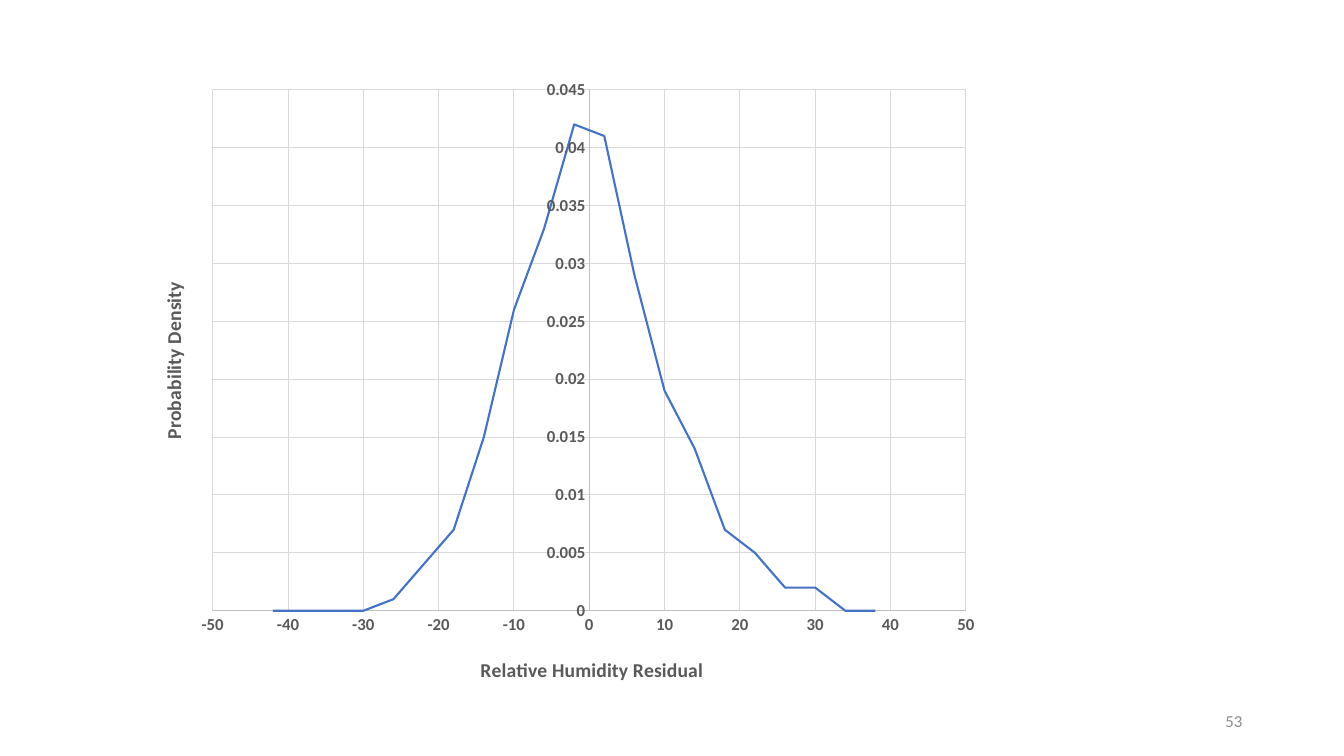
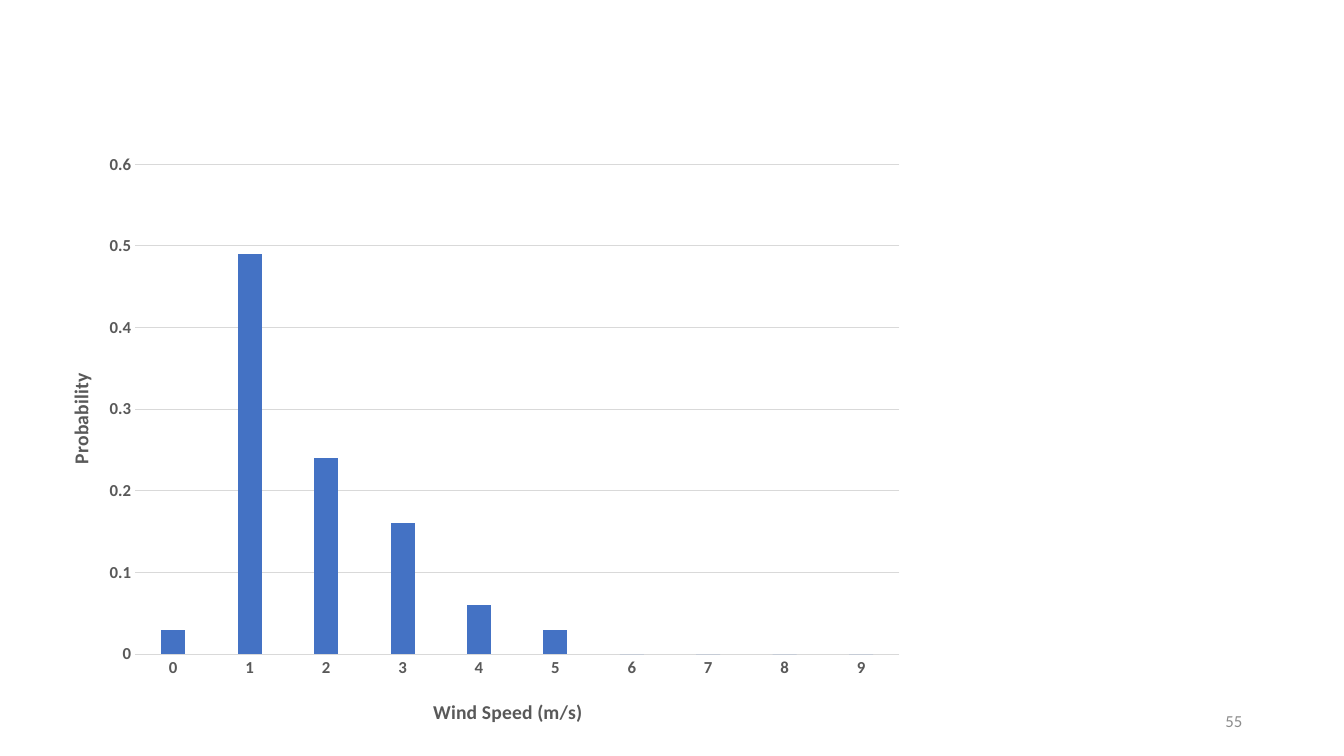
"""Build two chart slides: humidity residual density and wind speed probability."""
from lxml import etree
from pptx import Presentation
from pptx import util as u
from pptx.chart import data as chart_data
from pptx.dml.color import RGBColor
from pptx.enum import chart as chart_enum, text
from pptx.oxml import ns

COLORS = {"series": "4472C4", "label": "595959", "grid": "D9D9D9", "axis": "BFBFBF", "number": "8C8C8C"}
FONT = "Calibri"
CHART_TYPES = chart_enum.XL_CHART_TYPE


def style_font(font, size, color, bold=False):
    for name, value in {"name": FONT, "size": u.Pt(size), "bold": bold}.items():
        setattr(font, name, value)
    font.color.rgb = RGBColor.from_string(COLORS[color])


def set_layout(parent, index, frame, left, top, width=None, height=None):
    old_layout = parent.find(ns.qn("c:layout"))
    if old_layout is not None:
        parent.remove(old_layout)
    layout = etree.Element(ns.qn("c:layout"))
    manual = etree.SubElement(layout, ns.qn("c:manualLayout"))
    frame_left, frame_top, frame_width, frame_height = frame
    values = {"xMode": "edge", "yMode": "edge",
              "x": (left - frame_left) / frame_width, "y": (top - frame_top) / frame_height}
    if width:
        values = {"layoutTarget": "inner", **values, "w": width / frame_width, "h": height / frame_height}
    for name, value in values.items():
        etree.SubElement(manual, ns.qn(f"c:{name}")).set("val", str(value))
    parent.insert(index, layout)


humidity = chart_data.XyChartData()
humidity_series = humidity.add_series("Series 1")
densities = [0, 0, 0, 0, 0.001, 0.004, 0.007, 0.015, 0.026, 0.033, 0.042,
             0.041, 0.029, 0.019, 0.014, 0.007, 0.005, 0.002, 0.002, 0, 0]
for residual, density in zip(range(-42, 39, 4), densities):
    humidity_series.add_data_point(residual, density)

wind = chart_data.CategoryChartData()
wind.categories = [str(speed) for speed in range(10)]
wind.add_series("Series 1", [0.03, 0.49, 0.24, 0.16, 0.06, 0.03, 0, 0, 0, 0])

SLIDES = [
    {"number": "53", "type": CHART_TYPES.XY_SCATTER_LINES_NO_MARKERS, "data": humidity,
     "frame": (1.31, 0.67, 8.54, 6.28), "plot": (2.11, 0.89, 7.47, 5.17),
     "axes": [
         {"title": "Relative Humidity Residual", "at": (4.73, 6.48), "scale": (-50, 50, 10),
          "line": "axis", "grid": True},
         {"title": "Probability Density", "at": (1.55, 2.76), "scale": (0, 0.045, 0.005),
          "line": "axis", "grid": True}]},
    {"number": "55", "type": CHART_TYPES.COLUMN_CLUSTERED, "data": wind,
     "frame": (0.38, 1.42, 8.72, 5.93), "plot": (1.34, 1.63, 7.58, 4.86),
     "axes": [
         {"title": "Wind Speed (m/s)", "at": (4.26, 6.89), "scale": None,
          "line": "grid", "grid": False},
         {"title": "Probability", "at": (0.63, 3.67), "scale": (0, 0.6, 0.1),
          "line": None, "grid": True}]},
]

presentation = Presentation()
presentation.slide_width = u.Inches(13.33)
presentation.slide_height = u.Inches(7.5)

for content in SLIDES:
    slide = presentation.slides.add_slide(presentation.slide_layouts[6])

    number_box = slide.shapes.add_textbox(*map(u.Inches, (9.42, 6.95, 3, 0.4)))
    number_box.text_frame.word_wrap = True
    number_box.text_frame.vertical_anchor = text.MSO_ANCHOR.MIDDLE
    paragraph = number_box.text_frame.paragraphs[0]
    paragraph.text = content["number"]
    paragraph.alignment = text.PP_ALIGN.RIGHT
    style_font(paragraph.runs[0].font, 12, "number")

    frame = content["frame"]
    chart = slide.shapes.add_chart(content["type"], *map(u.Inches, frame), content["data"]).chart
    chart.has_legend = False
    chart.has_title = False
    chart.font.name = FONT
    chart.font.size = u.Pt(10)
    plot_area = chart.plots[0]._element.getparent()
    set_layout(plot_area, 0, frame, *content["plot"])

    for axis, style in zip((chart.category_axis, chart.value_axis), content["axes"]):
        title_frame = axis.axis_title.text_frame
        title_frame.text = style["title"]
        style_font(title_frame.paragraphs[0].runs[0].font, 14, "label", True)
        set_layout(axis.axis_title._element, 1, frame, *style["at"])
        style_font(axis.tick_labels.font, 12, "label", True)
        axis.major_tick_mark = axis.minor_tick_mark = chart_enum.XL_TICK_MARK.NONE
        if style["scale"]:
            for name, value in zip(("minimum_scale", "maximum_scale", "major_unit"), style["scale"]):
                setattr(axis, name, value)
        axis.has_major_gridlines = style["grid"]
        lines = [(axis.format.line, style["line"])]
        if style["grid"]:
            lines.append((axis.major_gridlines.format.line, "grid"))
        for line, color in lines:
            if color:
                line.color.rgb = RGBColor.from_string(COLORS[color])
                line.width = u.Pt(0.75)
            else:
                line.fill.background()

    plot = chart.plots[0]
    plot.vary_by_categories = False
    series = plot.series[0]
    series_color = RGBColor.from_string(COLORS["series"])
    if content["type"] == CHART_TYPES.COLUMN_CLUSTERED:
        plot.gap_width = 219
        plot.overlap = -27
        series.format.fill.solid()
        series.format.fill.fore_color.rgb = series_color
    else:
        series.smooth = False
        series.marker.style = chart_enum.XL_MARKER_STYLE.NONE
        series.format.line.color.rgb = series_color
        series.format.line.width = u.Pt(1.5)
        smooth = series._element.find(ns.qn("c:smooth"))
        if smooth is None:
            smooth = etree.SubElement(series._element, ns.qn("c:smooth"))
        smooth.set("val", "0")

presentation.save("out.pptx")
